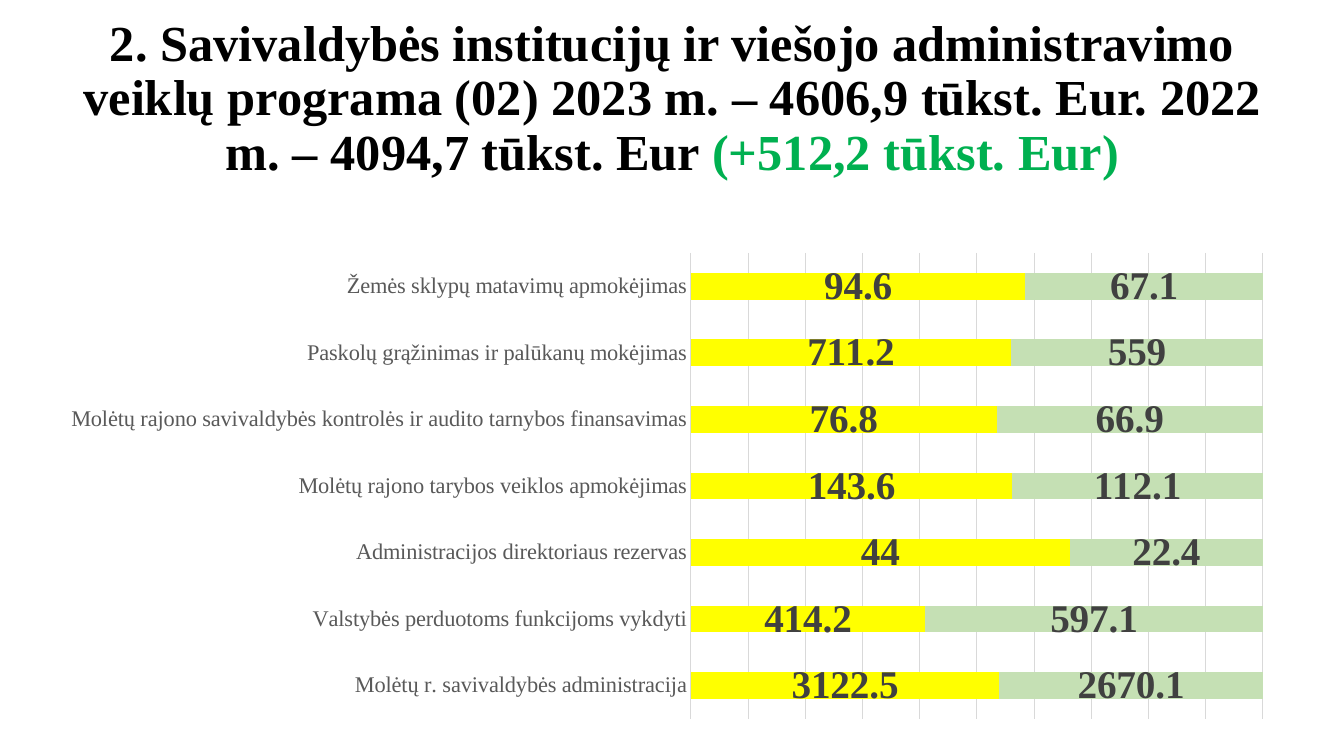
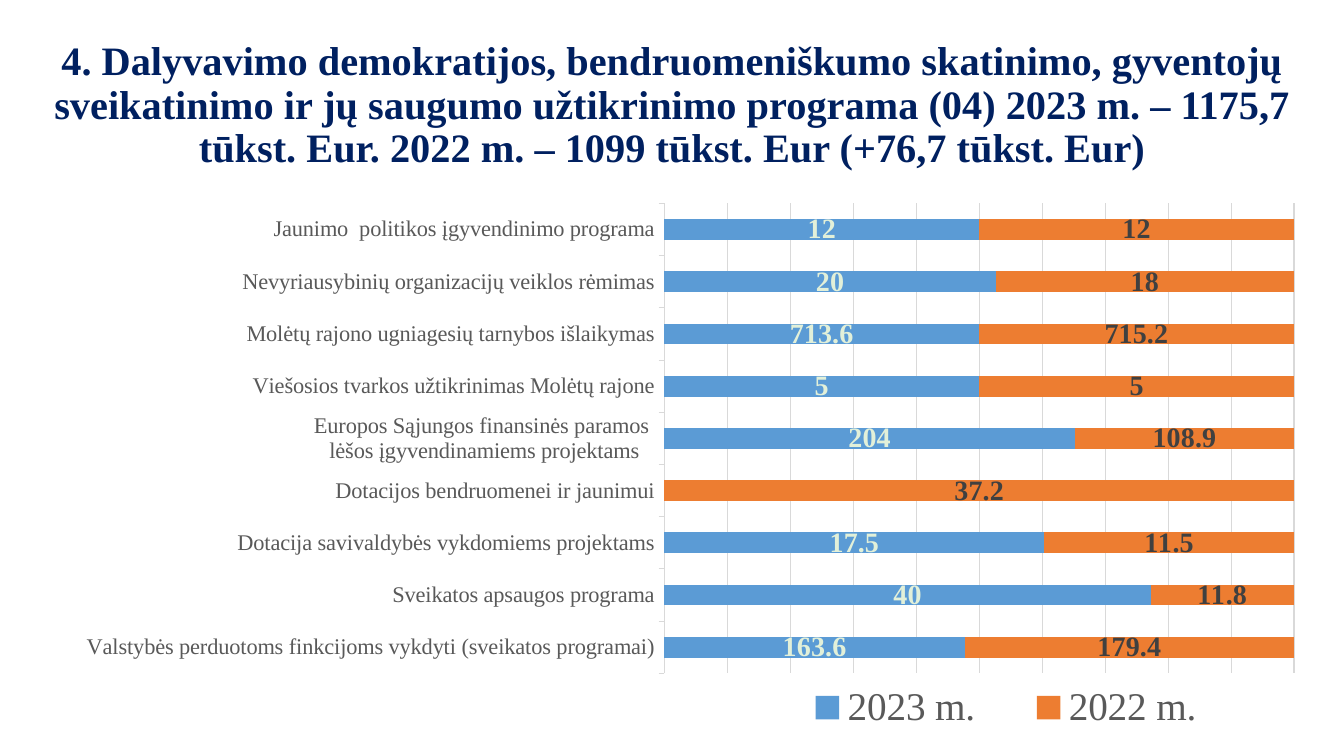
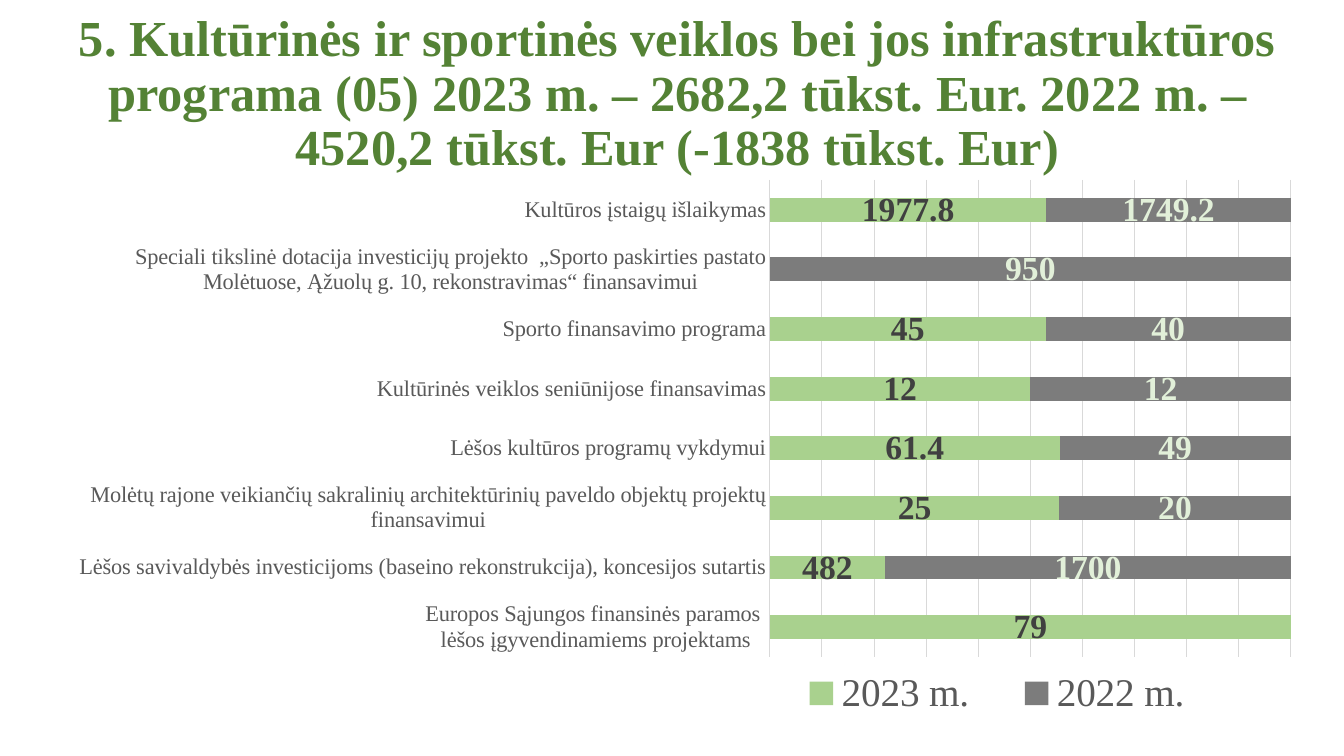
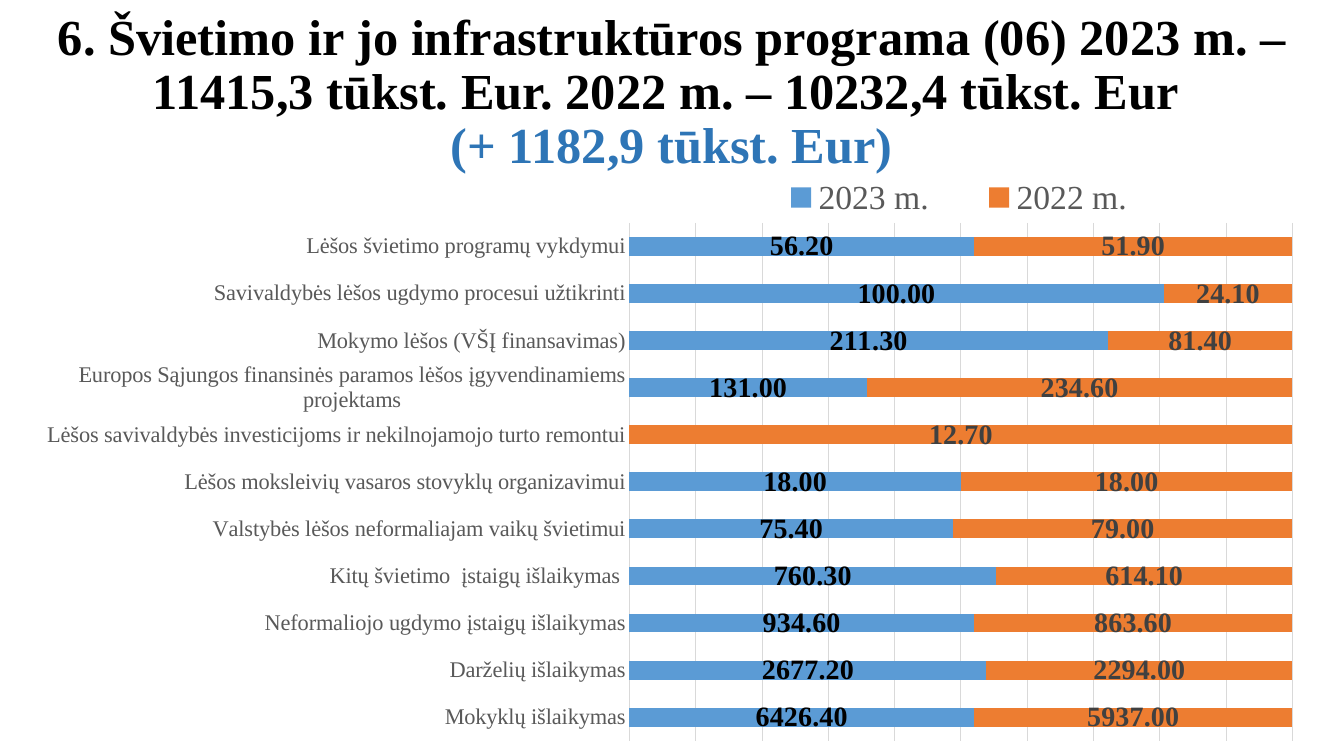
from lxml import etree
from pptx import Presentation
from pptx.chart.data import CategoryChartData
from pptx.dml.color import RGBColor
from pptx.enum.chart import XL_CHART_TYPE as ChartType
from pptx.enum.chart import XL_LABEL_POSITION as LabelPos
from pptx.enum.chart import XL_LEGEND_POSITION as LegendPos
from pptx.enum.chart import XL_TICK_LABEL_POSITION as TickLabelPos
from pptx.enum.chart import XL_TICK_MARK as TickMark
from pptx.enum.text import MSO_ANCHOR as Anchor
from pptx.enum.text import PP_ALIGN as Align
from pptx.oxml.ns import qn
from pptx.util import Inches, Pt

COLORS = {
    "black": "000000", "green": "00B050", "navy": "002060",
    "forest": "548235", "steel": "2E75B6", "axis": "595959",
    "grid": "D9D9D9", "dark": "404040", "pale": "E2F0D9",
    "yellow": "FFFF00", "mint": "C5E0B4", "blue": "5B9BD5",
    "orange": "ED7D31", "leaf": "A9D18E", "gray": "7C7C7C",
}
FONT = "Times New Roman"
YEARS = ("2023 m.", "2022 m.")


class Deck:
    """Shared style and the current slide; boxes are percentages of the slide."""

    def __init__(self):
        self.prs = Presentation()
        self.prs.slide_width, self.prs.slide_height = Inches(13.33), Inches(7.5)

    def new_slide(self):
        self.s = self.prs.slides.add_slide(self.prs.slide_layouts[6])

    def box(self, at):
        w, h = self.prs.slide_width, self.prs.slide_height
        return [int(v / 100 * side) for v, side in zip(at, (w, h, w, h))]

    @staticmethod
    def rgb(name):
        return RGBColor.from_string(COLORS[name])

    def style(self, font, size, color, bold=False):
        font.name, font.size, font.bold = FONT, Pt(size), bold
        font.color.rgb = self.rgb(color)

    def line(self, fmt):
        fmt.line.color.rgb = self.rgb("grid")
        fmt.line.width = Pt(0.75)

    def title(self, at, runs, size=36):
        tf = self.s.shapes.add_textbox(*self.box(at)).text_frame
        tf.word_wrap, tf.vertical_anchor = True, Anchor.MIDDLE
        p = tf.paragraphs[0]
        p.alignment, p.line_spacing = Align.CENTER, 0.9
        for text, color in runs:
            if text.startswith("\n"):
                p.add_line_break()
            r = p.add_run()
            r.text = text.lstrip("\n")
            self.style(r.font, size, color, True)

    @staticmethod
    def layout(at, frame, inner=False):
        """Manual layout of a chart part, as fractions of the chart frame."""
        x, y, w, h = at
        fx, fy, fw, fh = frame
        items = [("layoutTarget", "inner")] if inner else []
        items += [("xMode", "edge"), ("yMode", "edge"),
                  ("x", (x - fx) / fw), ("y", (y - fy) / fh),
                  ("w", w / fw), ("h", h / fh)]
        node = etree.Element(qn("c:layout"))
        manual = etree.SubElement(node, qn("c:manualLayout"))
        for tag, val in items:
            text = val if isinstance(val, str) else f"{val:.4f}"
            etree.SubElement(manual, qn("c:" + tag)).set("val", text)
        return node

    def place(self, part, node, index):
        for old in part.findall(qn("c:layout")):
            part.remove(old)
        part.insert(index, node)

    def chart(self, at, plot_at, rows, fills, inks, label_size, fmt="General",
              ticks=TickMark.NONE, legend=None):
        # Values: one row per category, from the bottom bar up
        data = CategoryChartData()
        data.categories = [row[0] for row in rows]
        for i, year in enumerate(YEARS, 1):
            data.add_series(year, [row[i] for row in rows])
        chart = self.s.shapes.add_chart(
            ChartType.BAR_STACKED_100, *self.box(at), data).chart
        chart.has_title = False
        self.style(chart.font, 16, "black")
        space = chart.plots[0]._element.getparent()
        self.place(space, self.layout(plot_at, at, True), 0)

        # Axes
        cat, val = chart.category_axis, chart.value_axis
        cat.major_tick_mark, cat.minor_tick_mark = ticks, TickMark.NONE
        cat.tick_label_position = TickLabelPos.NEXT_TO_AXIS
        self.style(cat.tick_labels.font, 16, "axis")
        self.line(cat.format)
        val.visible = False
        val.has_major_gridlines = True
        self.line(val.major_gridlines.format)

        # Bars and their labels
        plot = chart.plots[0]
        plot.gap_width, plot.overlap, plot.vary_by_categories = 150, 100, False
        for ser, fill, ink in zip(plot.series, fills, inks):
            ser.format.fill.solid()
            ser.format.fill.fore_color.rgb = self.rgb(fill)
            labels = ser.data_labels
            labels.show_value, labels.position = True, LabelPos.CENTER
            labels.number_format, labels.number_format_is_linked = fmt, False
            self.style(labels.font, label_size, ink, True)

        # Legend
        chart.has_legend = legend is not None
        if legend:
            pos, size, legend_at = legend
            chart.legend.position = pos
            chart.legend.include_in_layout = False
            self.style(chart.legend.font, size, "axis")
            self.place(chart.legend._element, self.layout(legend_at, at), 1)


ADMINISTRATION = [
    ("Molėtų r. savivaldybės administracija", 3122.5, 2670.1),
    ("Valstybės perduotoms funkcijoms vykdyti", 414.2, 597.1),
    ("Administracijos direktoriaus rezervas", 44, 22.4),
    ("Molėtų rajono tarybos veiklos apmokėjimas", 143.6, 112.1),
    ("Molėtų rajono savivaldybės kontrolės ir audito tarnybos finansavimas", 76.8, 66.9),
    ("Paskolų grąžinimas ir palūkanų mokėjimas", 711.2, 559),
    ("Žemės sklypų matavimų apmokėjimas", 94.6, 67.1),
]
COMMUNITY = [
    ("Valstybės perduotoms finkcijoms vykdyti (sveikatos programai)", 163.6, 179.4),
    ("Sveikatos apsaugos programa", 40, 11.8),
    ("Dotacija savivaldybės vykdomiems projektams", 17.5, 11.5),
    ("Dotacijos bendruomenei ir jaunimui", None, 37.2),
    ("Europos Sąjungos finansinės paramos \nlėšos įgyvendinamiems projektams", 204, 108.9),
    ("Viešosios tvarkos užtikrinimas Molėtų rajone", 5, 5),
    ("Molėtų rajono ugniagesių tarnybos išlaikymas", 713.6, 715.2),
    ("Nevyriausybinių organizacijų veiklos rėmimas", 20, 18),
    ("Jaunimo  politikos įgyvendinimo programa", 12, 12),
]
CULTURE = [
    ("Europos Sąjungos finansinės paramos \nlėšos įgyvendinamiems projektams", 79, None),
    ("Lėšos savivaldybės investicijoms (baseino rekonstrukcija), koncesijos sutartis", 482, 1700),
    ("Molėtų rajone veikiančių sakralinių architektūrinių paveldo objektų projektų "
     "finansavimui", 25, 20),
    ("Lėšos kultūros programų vykdymui", 61.4, 49),
    ("Kultūrinės veiklos seniūnijose finansavimas", 12, 12),
    ("Sporto finansavimo programa", 45, 40),
    ("Speciali tikslinė dotacija investicijų projekto  „Sporto paskirties pastato "
     "Molėtuose, Ąžuolų g. 10, rekonstravimas“ finansavimui", None, 950),
    ("Kultūros įstaigų išlaikymas", 1977.8, 1749.2),
]
EDUCATION = [
    ("Mokyklų išlaikymas", 6426.4, 5937),
    ("Darželių išlaikymas", 2677.2, 2294),
    ("Neformaliojo ugdymo įstaigų išlaikymas", 934.6, 863.6),
    ("Kitų švietimo  įstaigų išlaikymas ", 760.3, 614.1),
    ("Valstybės lėšos neformaliajam vaikų švietimui", 75.4, 79),
    ("Lėšos moksleivių vasaros stovyklų organizavimui", 18, 18),
    ("Lėšos savivaldybės investicijoms ir nekilnojamojo turto remontui", None, 12.7),
    ("Europos Sąjungos finansinės paramos lėšos įgyvendinamiems projektams", 131, 234.6),
    ("Mokymo lėšos (VŠĮ finansavimas)", 211.3, 81.4),
    ("Savivaldybės lėšos ugdymo procesui užtikrinti", 100, 24.1),
    ("Lėšos švietimo programų vykdymui", 56.2, 51.9),
]


def main():
    deck = Deck()

    # Administration programme
    deck.new_slide()
    deck.title((4.2, 3.47, 91.65, 19.33), [
        ("2. Savivaldybės institucijų ir viešojo administravimo veiklų programa (02) "
         "2023 m. – 4606,9 tūkst. Eur. 2022 m. – 4094,7 tūkst. Eur ", "black"),
        ("(+512,2 tūkst. Eur)", "green")])
    deck.chart((3.53, 24.27, 92.25, 72.27), (51.41, 33.47, 42.56, 61.64),
               ADMINISTRATION, ("yellow", "mint"), ("dark", "dark"), 28)

    # Community and health programme
    deck.new_slide()
    deck.title((0, 3.6, 100, 20.93), [
        ("4. Dalyvavimo demokratijos, bendruomeniškumo skatinimo, gyventojų "
         "sveikatinimo ir jų saugumo užtikrinimo programa (04) 2023 m. – 1175,7 "
         "tūkst. Eur. 2022 m. – 1099 tūkst. Eur (+76,7 tūkst. Eur)", "navy")], 28.8)
    deck.chart((1, 24.53, 96.5, 73.33), (49.44, 26.92, 46.84, 62.17),
               COMMUNITY, ("blue", "orange"), ("pale", "dark"), 20,
               ticks=TickMark.OUTSIDE,
               legend=(LegendPos.BOTTOM, 28, (57.07, 89.33, 35.57, 8.67)))

    # Culture and sports programme
    deck.new_slide()
    deck.title((2.93, 2.8, 94.95, 19.47), [
        ("5. Kultūrinės ir sportinės veiklos bei jos infrastruktūros programa (05) "
         "2023 m. – 2682,2 tūkst. Eur. 2022 m. – 4520,2 tūkst. Eur "
         "(-1838 tūkst. Eur)", "forest")])
    deck.chart((4.05, 22.4, 93.83, 74.8), (57.29, 23.81, 38.76, 63.1),
               CULTURE, ("leaf", "gray"), ("dark", "pale"), 24,
               legend=(LegendPos.BOTTOM, 28, (57.07, 87.6, 34.23, 8.27)))

    # Education programme
    deck.new_slide()
    deck.title((1.43, 2.67, 97.13, 19.33), [
        ("6. Švietimo ir jo infrastruktūros programa (06) 2023 m. – 11415,3 tūkst. "
         "Eur. 2022 m. – 10232,4 tūkst. Eur ", "black"),
        ("\n(+ 1182,9 tūkst. Eur)", "steel")])
    deck.chart((0.83, 22, 96.23, 78), (46.84, 29.5, 49.33, 68.5),
               EDUCATION, ("blue", "orange"), ("black", "dark"), 20, fmt="0.00",
               legend=(LegendPos.TOP, 24, (55.2, 22.4, 32.3, 7.47)))

    deck.prs.save("out.pptx")


if __name__ == "__main__":
    main()
